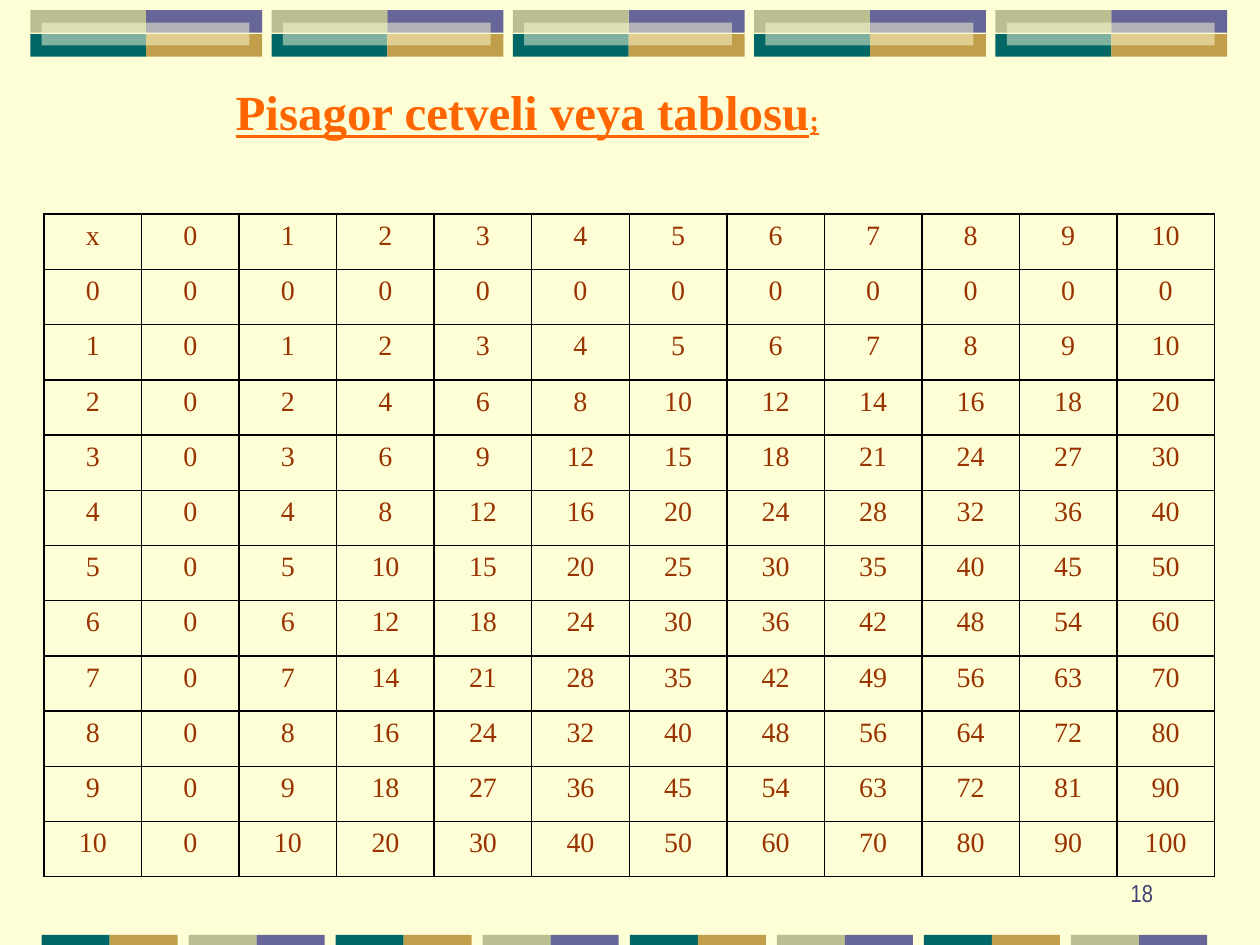
from pptx import Presentation
from pptx.dml.color import RGBColor
from pptx.enum.shapes import MSO_SHAPE
from pptx.enum.text import MSO_ANCHOR, MSO_AUTO_SIZE, PP_ALIGN
from pptx.oxml import parse_xml
from pptx.oxml.ns import nsdecls
from pptx.util import Inches, Pt

RECTANGLE = MSO_SHAPE.RECTANGLE
TOP, BOTTOM = MSO_ANCHOR.TOP, MSO_ANCHOR.BOTTOM
LEFT, CENTER, RIGHT = PP_ALIGN.LEFT, PP_ALIGN.CENTER, PP_ALIGN.RIGHT
NO_AUTOFIT = MSO_AUTO_SIZE.NONE
TITLE_ONLY = 5

COLORS = {
    "cream": "FEFED6",
    "purple": "666699",
    "gold": "C09E4A",
    "teal": "006666",
    "olive": "BABE90",
    "orange": "FF6600",
    "brown": "993300",
    "indigo": "404176",
    "black": "000000",
}
SERIF, NARROW = "Times New Roman", "Arial Narrow"


class SlideBuilder:
    def __init__(self, slide):
        self.slide = slide
        background = slide.background.fill
        background.solid()
        background.fore_color.rgb = self.color("cream")

    def color(self, name):
        return RGBColor.from_string(COLORS[name])

    def style(self, font, face, size, color):
        font.name = face
        font.size = Pt(size)
        font.color.rgb = self.color(color)

    def bar(self, left, top, width, height, color, opacity=100):
        bar = self.slide.shapes.add_shape(
            RECTANGLE, Inches(left), Inches(top), Inches(width), Inches(height))
        bar.shadow.inherit = False
        bar.line.fill.background()
        bar.fill.solid()
        bar.fill.fore_color.rgb = self.color(color)
        if opacity < 100:
            tint = bar.fill._xPr.solidFill[0]
            tint.append(parse_xml(
                f'<a:alpha {nsdecls("a")} val="{opacity * 1000}"/>'))

    def title(self, heading, ending, left, top, width, height):
        title = self.slide.shapes.title
        title.left, title.top = Inches(left), Inches(top)
        title.width, title.height = Inches(width), Inches(height)
        frame = title.text_frame
        frame.word_wrap = False
        frame.auto_size = NO_AUTOFIT
        frame.vertical_anchor = TOP
        paragraph = frame.paragraphs[0]
        paragraph.alignment = LEFT
        for text, size in ((heading, 28), (ending, 16)):
            run = paragraph.add_run()
            run.text = text
            self.style(run.font, SERIF, size, "orange")
            run.font.bold = run.font.underline = True

    def page_number(self, number, left, top, width, height):
        frame = self.slide.shapes.add_textbox(
            Inches(left), Inches(top), Inches(width), Inches(height)).text_frame
        frame.word_wrap = True
        frame.vertical_anchor = BOTTOM
        frame.text = str(number)
        paragraph = frame.paragraphs[0]
        paragraph.alignment = RIGHT
        self.style(paragraph.runs[0].font, NARROW, 14, "indigo")

    def cell(self, cell, text):
        properties = cell._tc.get_or_add_tcPr()
        for side in ("lnL", "lnR", "lnT", "lnB"):
            properties.append(parse_xml(
                f'<a:{side} {nsdecls("a")} w="{Pt(1)}"><a:solidFill>'
                f'<a:srgbClr val="{COLORS["black"]}"/></a:solidFill></a:{side}>'))
        cell.fill.background()
        cell.text_frame.text = text
        paragraph = cell.text_frame.paragraphs[0]
        paragraph.alignment = CENTER
        self.style(paragraph.runs[0].font, SERIF, 16, "brown")

    def table(self, rows, left, top, width, height):
        table = self.slide.shapes.add_table(
            len(rows), len(rows[0]), Inches(left), Inches(top),
            Inches(width), Inches(height)).table
        table.first_row = table.horz_banding = False
        for column in table.columns:
            column.width = Inches(width / len(rows[0]))
        for row, values in zip(table.rows, rows):
            row.height = Inches(height / len(rows))
            for cell, value in zip(row.cells, values):
                self.cell(cell, str(value))


def main():
    presentation = Presentation()
    presentation.slide_width, presentation.slide_height = Inches(10), Inches(7.5)
    layout = presentation.slide_layouts[TITLE_ONLY]
    builder = SlideBuilder(presentation.slides.add_slide(layout))

    block_width, block_height = 0.92, 0.18
    block_pitch = (7.9 - 0.24) / 4
    for index in range(5):
        left = 0.24 + index * block_pitch
        for row, colors in enumerate((("olive", "purple"), ("teal", "gold"))):
            for column, color in enumerate(colors):
                builder.bar(left + column * block_width, 0.08 + row * 0.19,
                            block_width, block_height, color)
        builder.bar(left + 0.09, 0.18, 1.65, block_height, "cream", opacity=50)

    strip_width = 0.54
    strip_pitch = (8.5 - 0.33) / 7
    strip_pairs = (("teal", "gold"), ("olive", "purple"))
    for index in range(8):
        for column, color in enumerate(strip_pairs[index % 2]):
            builder.bar(0.33 + index * strip_pitch + column * strip_width, 7.42,
                        strip_width, 0.08, color)

    builder.page_number(18, 7.17, 6.75, 2.08, 0.5)
    builder.title("Pisagor cetveli veya tablosu", ";", 1.77, 0.6, 4.84, 0.97)

    factors = range(11)
    products = [["x", *factors]]
    products += [[a, *(a * b for b in factors)] for a in factors]
    builder.table(products, 0.35, 1.7, 9.29, 5.26)

    presentation.save("out.pptx")


if __name__ == "__main__":
    main()
